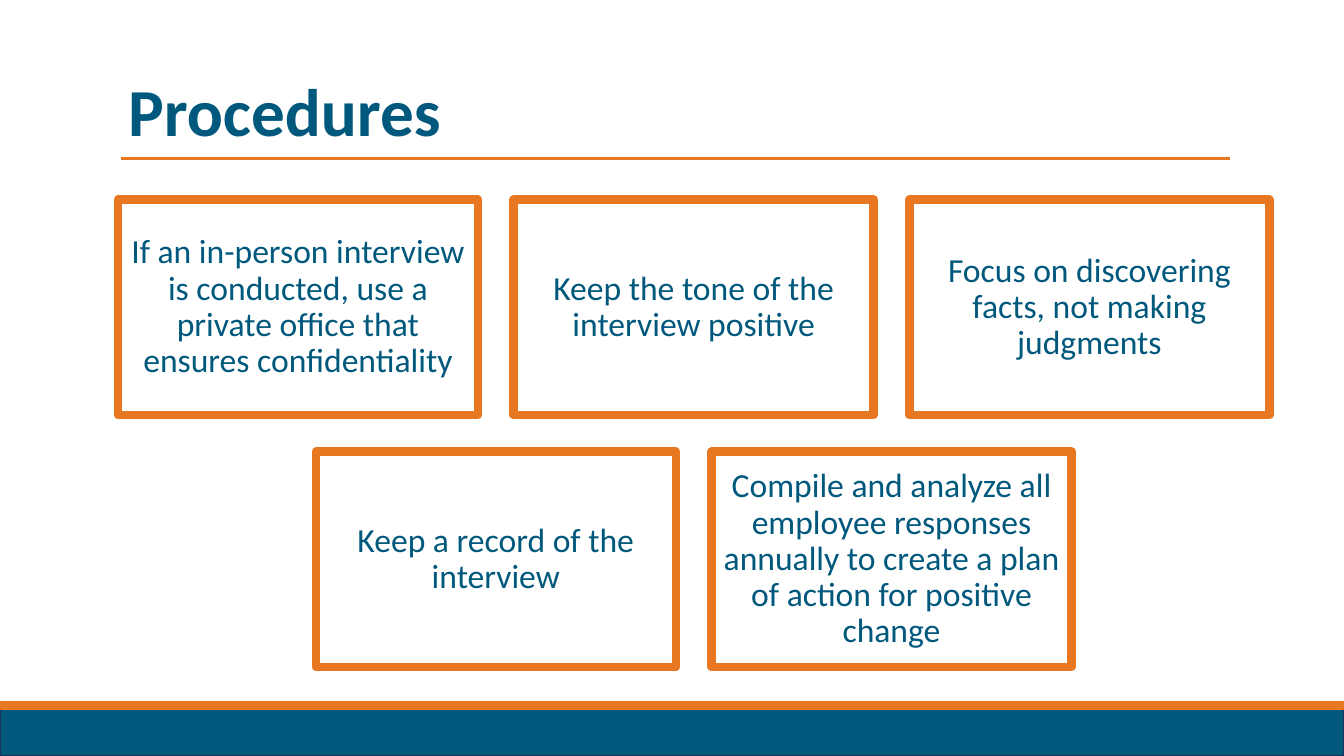
from lxml import etree
from pptx import Presentation
from pptx.dml.color import RGBColor
from pptx.enum.shapes import MSO_CONNECTOR, MSO_SHAPE
from pptx.enum.text import MSO_ANCHOR, MSO_AUTO_SIZE, PP_ALIGN
from pptx.oxml.ns import qn
from pptx.util import Inches, Pt

RECTANGLE = MSO_SHAPE.RECTANGLE
STRAIGHT = MSO_CONNECTOR.STRAIGHT
MIDDLE, BOTTOM = MSO_ANCHOR.MIDDLE, MSO_ANCHOR.BOTTOM
LEFT, CENTER = PP_ALIGN.LEFT, PP_ALIGN.CENTER
NO_AUTOFIT = MSO_AUTO_SIZE.NONE

BLUE = RGBColor(0x00, 0x58, 0x7C)
NAVY = RGBColor(0x16, 0x31, 0x5A)
ORANGE = RGBColor(0xE8, 0x77, 0x22)
WHITE = RGBColor(0xFF, 0xFF, 0xFF)

SLIDE_WIDTH, SLIDE_HEIGHT = 13.33, 7.5
BOX_WIDTH, BOX_HEIGHT = 3.57, 2.14
COLUMN_STEP, ROW_STEP = 3.925, 2.5
GRID_CENTER, GRID_TOP = 6.88, 1.98

PROCEDURE_ROWS = [
    [
        "If an in-person interview is conducted, use a private office that ensures confidentiality",
        "Keep the tone of the interview positive",
        "Focus on discovering facts, not making judgments",
    ],
    [
        "Keep a record of the interview",
        "Compile and analyze all employee responses annually to create a plan of action "
        "for positive change",
    ],
]


def write_text(shape, text, size, align, anchor, bold=False):
    frame = shape.text_frame
    frame.word_wrap = True
    frame.auto_size = NO_AUTOFIT
    frame.vertical_anchor = anchor
    para = frame.paragraphs[0]
    para.text = text
    para.alignment = align
    para.line_spacing = 0.9
    para.font.name = "Calibri"
    para.font.size = Pt(size)
    para.font.bold = bold
    para.font.color.rgb = BLUE


def add_box(slide, left, top, width, height, fill, line, line_width):
    box = slide.shapes.add_shape(
        RECTANGLE, Inches(left), Inches(top), Inches(width), Inches(height))
    box.shadow.inherit = False
    box.fill.solid()
    box.fill.fore_color.rgb = fill
    box.line.color.rgb = line
    box.line.width = Pt(line_width)
    return box


def add_rule(slide, left, right, top, width):
    """Draw a horizontal orange line."""
    rule = slide.shapes.add_connector(
        STRAIGHT, Inches(left), Inches(top), Inches(right), Inches(top))
    rule.line.color.rgb = ORANGE
    rule.line.width = Pt(width)
    etree.SubElement(rule._element.spPr, qn("a:effectLst"))


def add_title(slide, text):
    title = slide.shapes.title
    title.left, title.top = Inches(1.17), Inches(0.74)
    title.width, title.height = Inches(11.01), Inches(0.81)
    write_text(title, text, 48, LEFT, BOTTOM, bold=True)


def add_procedures(slide):
    """Lay out the boxes in rows centred on the same axis."""
    for row, procedures in enumerate(PROCEDURE_ROWS):
        row_width = (len(procedures) - 1) * COLUMN_STEP + BOX_WIDTH
        row_left = GRID_CENTER - row_width / 2
        for column, procedure in enumerate(procedures):
            box = add_box(slide, row_left + column * COLUMN_STEP, GRID_TOP + row * ROW_STEP,
                          BOX_WIDTH, BOX_HEIGHT, WHITE, ORANGE, 6)
            write_text(box, procedure, 24, CENTER, MIDDLE)
            frame = box.text_frame
            frame.margin_left = frame.margin_right = Inches(0.1)
            frame.margin_top = frame.margin_bottom = Inches(0.1)


def main():
    deck = Presentation()
    deck.slide_width, deck.slide_height = Inches(SLIDE_WIDTH), Inches(SLIDE_HEIGHT)
    slide = deck.slides.add_slide(deck.slide_layouts[5])
    add_box(slide, 0, 7.04, SLIDE_WIDTH, 0.46, BLUE, NAVY, 1)
    add_rule(slide, 0, SLIDE_WIDTH, 7, 6)
    add_rule(slide, 1.2, 12.2, 1.57, 2.25)
    add_title(slide, "Procedures")
    add_procedures(slide)
    deck.save("out.pptx")


if __name__ == "__main__":
    main()
